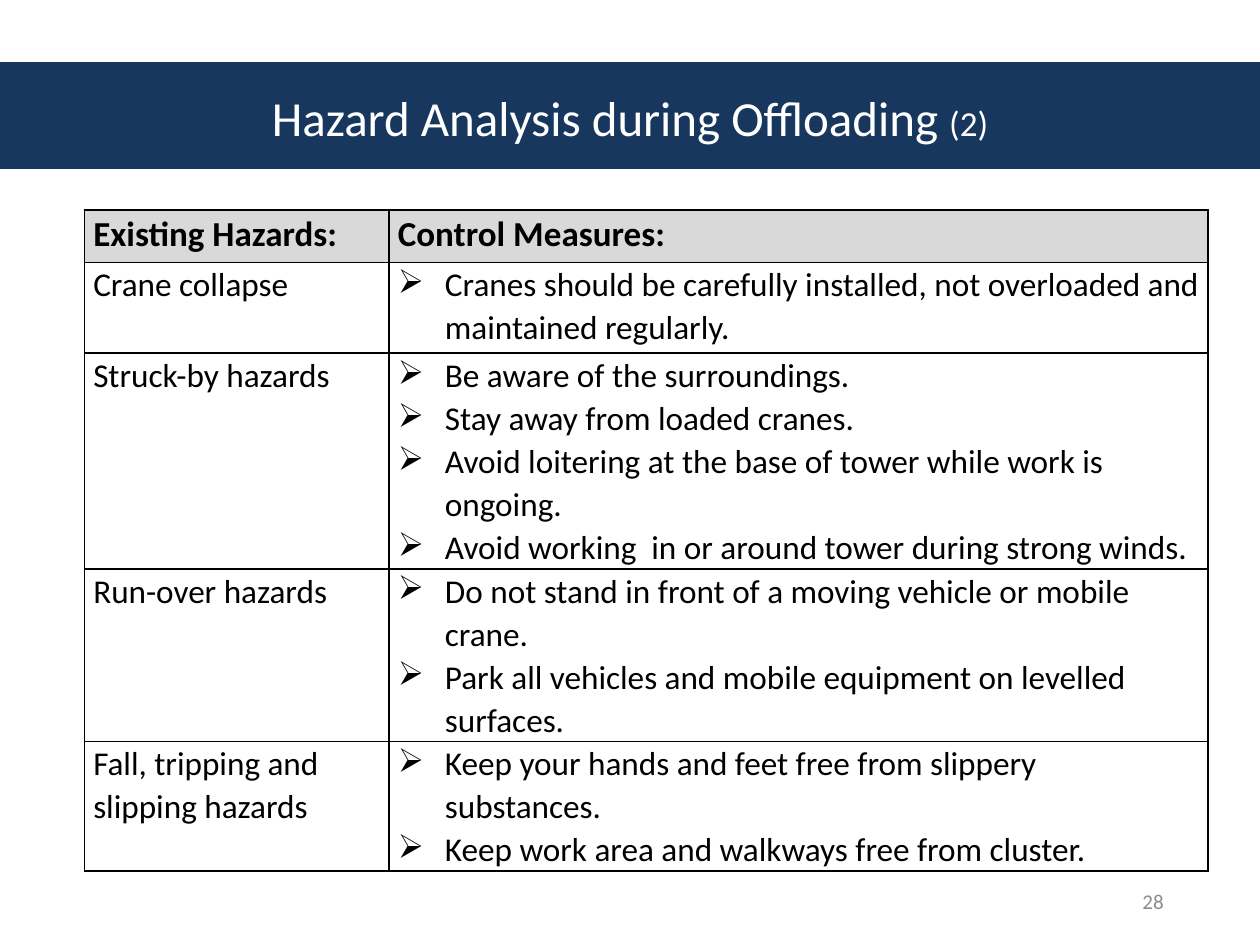
from lxml import etree
from pptx import Presentation
from pptx import util as u
from pptx.dml.color import RGBColor
from pptx.enum import shapes, text
from pptx.oxml.ns import qn

# Content
TITLE = [("Hazard Analysis during Offloading ", 28), ("(2)", 20)]
PAGE_NUMBER = "28"
HEADERS = ["Existing Hazards:", "Control Measures:"]
# Hazard, control measures, row height in cm
HAZARDS = [
    ("Crane collapse",
     ["Cranes should be carefully installed, not overloaded and maintained regularly."], 1.83),
    ("Struck-by hazards",
     ["Be aware of the surroundings.",
      "Stay away from loaded cranes.",
      "Avoid loitering at the base of tower while work is ongoing.",
      "Avoid working  in or around tower during strong winds."], 4.34),
    ("Run-over hazards",
     ["Do not stand in front of a moving vehicle or mobile crane.",
      "Park all vehicles and mobile equipment on levelled surfaces."], 3.48),
    ("Fall, tripping and slipping hazards",
     ["Keep your hands and feet free from slippery substances.",
      "Keep work area and walkways free from cluster."], 2.6),
]

# Style
COLORS = {"band": "17375E", "title": "FFFFFF", "header": "D9D9D9",
          "cell": "FFFFFF", "text": "000000", "number": "8C8C8C"}
FONT = "Calibri"
HEADER_HEIGHT = 1.06
COLUMN_WIDTHS = [6.14, 16.51]
INDENT = u.Cm(0.95)


def color(name):
    return RGBColor.from_string(COLORS[name])


def add_run(paragraph, words, size, color_name, bold=False):
    run = paragraph.add_run()
    run.text = words
    run.font.name = FONT
    run.font.size = u.Pt(size)
    run.font.bold = bold
    run.font.color.rgb = color(color_name)


def add_bullet(paragraph):
    properties = paragraph._p.get_or_add_pPr()
    properties.set("marL", str(INDENT))
    properties.set("indent", str(-INDENT))
    etree.SubElement(properties, qn("a:buChar")).set("char", "➢")


def add_borders(cell):
    properties = cell._tc.get_or_add_tcPr()
    for side in ("lnL", "lnR", "lnT", "lnB"):
        line = etree.SubElement(properties, qn(f"a:{side}"), w=str(u.Pt(1)))
        fill = etree.SubElement(line, qn("a:solidFill"))
        etree.SubElement(fill, qn("a:srgbClr"), val=COLORS["text"])


def fill_cell(cell, lines, size, fill, bold=False, bullets=False):
    cell.margin_left = cell.margin_right = u.Cm(0.18)
    cell.margin_top = cell.margin_bottom = 0
    add_borders(cell)
    cell.fill.solid()
    cell.fill.fore_color.rgb = color(fill)
    frame = cell.text_frame
    for index, words in enumerate(lines):
        paragraph = frame.add_paragraph() if index else frame.paragraphs[0]
        paragraph.line_spacing = 1.07
        if bullets:
            add_bullet(paragraph)
        add_run(paragraph, words, size, "text", bold)


presentation = Presentation()
presentation.slide_width, presentation.slide_height = u.Cm(25.4), u.Cm(19.05)
slide = presentation.slides.add_slide(presentation.slide_layouts[5])

# Title
title = slide.shapes.title
title.left, title.top = u.Cm(1.27), u.Cm(0.76)
title.width, title.height = u.Cm(22.86), u.Cm(3.18)
title.text_frame.auto_size = text.MSO_AUTO_SIZE.NONE
title.text_frame.vertical_anchor = text.MSO_ANCHOR.MIDDLE
heading = title.text_frame.paragraphs[0]
heading.alignment = text.PP_ALIGN.CENTER
for words, size in TITLE:
    add_run(heading, words, size, "title")

# Band behind the title
band = slide.shapes.add_shape(shapes.MSO_SHAPE.RECTANGLE, 0, u.Cm(1.27),
                              presentation.slide_width, u.Cm(2.12))
band.shadow.inherit = False
band.fill.solid()
band.fill.fore_color.rgb = color("band")
band.line.color.rgb = color("band")
band.line.width = u.Pt(0.75)
title.element.addprevious(band.element)

# Hazard table
row_heights = [HEADER_HEIGHT] + [height for _, _, height in HAZARDS]
table = slide.shapes.add_table(
    len(row_heights), len(HEADERS), u.Cm(1.7), u.Cm(4.23),
    u.Cm(sum(COLUMN_WIDTHS)), u.Cm(sum(row_heights))).table
for column, width in zip(table.columns, COLUMN_WIDTHS):
    column.width = u.Cm(width)
for row, height in zip(table.rows, row_heights):
    row.height = u.Cm(height)
for index, words in enumerate(HEADERS):
    fill_cell(table.cell(0, index), [words], 20, "header", bold=True)
for index, (hazard, measures, _) in enumerate(HAZARDS, start=1):
    fill_cell(table.cell(index, 0), [hazard], 19, "cell")
    fill_cell(table.cell(index, 1), measures, 19, "cell", bullets=True)

# Page number
number = slide.shapes.add_textbox(u.Cm(17.78), u.Cm(17.66), u.Cm(5.93), u.Cm(1.01))
number.text_frame.word_wrap = True
number.text_frame.vertical_anchor = text.MSO_ANCHOR.MIDDLE
paragraph = number.text_frame.paragraphs[0]
paragraph.alignment = text.PP_ALIGN.RIGHT
add_run(paragraph, PAGE_NUMBER, 12, "number")

presentation.save("out.pptx")
